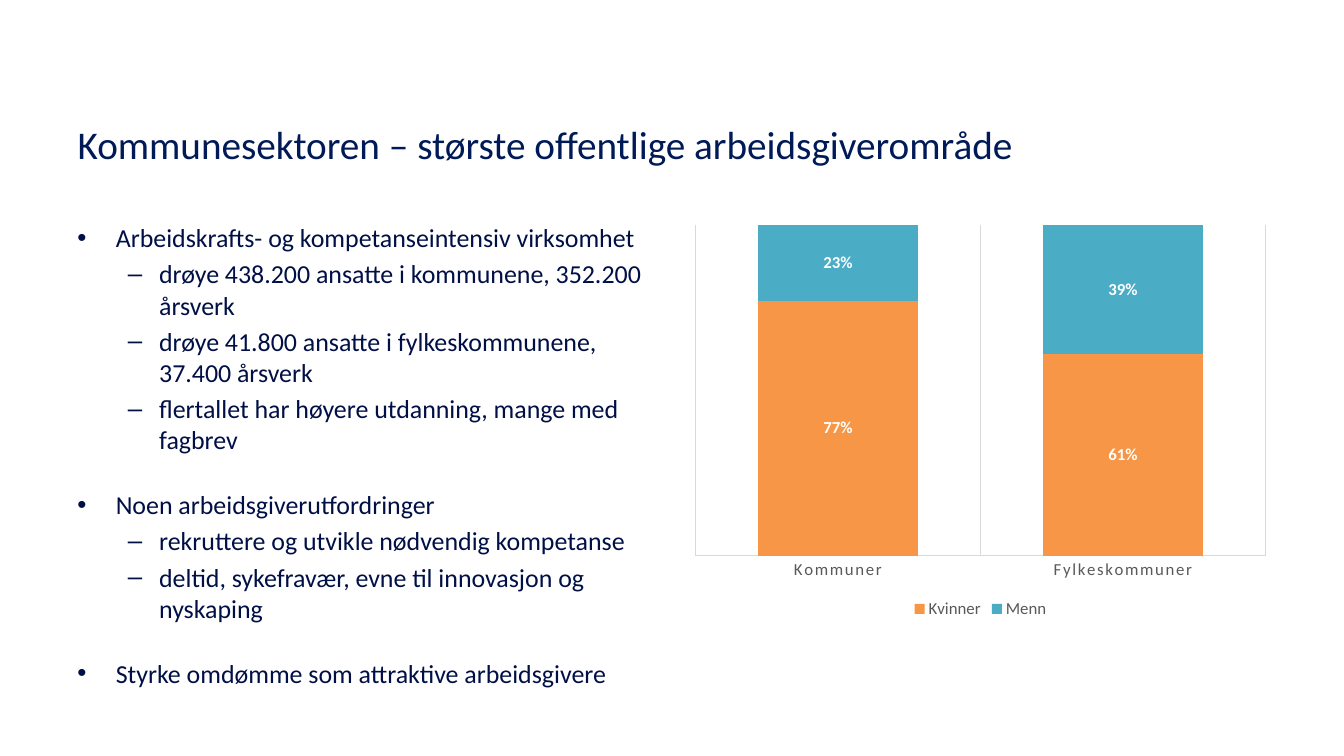
from dataclasses import dataclass

from lxml.etree import SubElement
from pptx import Presentation
from pptx.chart.data import CategoryChartData
from pptx.dml.color import RGBColor
from pptx.enum.chart import XL_CHART_TYPE, XL_LABEL_POSITION, XL_LEGEND_POSITION, XL_TICK_LABEL_POSITION, XL_TICK_MARK
from pptx.enum.text import MSO_ANCHOR, MSO_AUTO_SIZE, PP_ALIGN
from pptx.oxml.ns import qn
from pptx.util import Inches, Pt

TITLE = "Kommunesektoren – største offentlige arbeidsgiverområde"
SECTIONS = [
    ("Arbeidskrafts- og kompetanseintensiv virksomhet", [
        "drøye 438.200 ansatte i kommunene, 352.200 årsverk",
        "drøye 41.800 ansatte i fylkeskommunene, 37.400 årsverk",
        "flertallet har høyere utdanning, mange med fagbrev",
    ]),
    ("Noen arbeidsgiverutfordringer", [
        "rekruttere og utvikle nødvendig kompetanse",
        "deltid, sykefravær, evne til innovasjon og nyskaping",
    ]),
    ("Styrke omdømme som attraktive arbeidsgivere", []),
]
CATEGORIES = ["Kommuner", "Fylkeskommuner"]
SHARES = {"Kvinner": [0.77, 0.61], "Menn": [0.23, 0.39]}


@dataclass(frozen=True)
class Theme:
    font: str = "Calibri"
    title: RGBColor = RGBColor.from_string("001A58")
    body: RGBColor = RGBColor.from_string("001046")
    label: RGBColor = RGBColor.from_string("FFFFFF")
    axis: RGBColor = RGBColor.from_string("595959")
    grid: RGBColor = RGBColor.from_string("D9D9D9")
    series: tuple = (RGBColor.from_string("F79646"), RGBColor.from_string("4BACC6"))
    title_size: float = 28
    body_size: float = 18.5
    chart_size: float = 12
    section_gap: float = 24
    item_gap: float = 3.7


THEME = Theme()
LEFT, TOP, COLUMN, GUTTER = 0.67, 2.15, 5.89, 0.22


def set_font(font, size, color, bold=False):
    font.name = THEME.font
    font.size = Pt(size)
    font.color.rgb = color
    font.bold = bold


def set_line(line):
    line.color.rgb = THEME.grid
    line.width = Pt(0.75)


def add_title(page):
    title = page.shapes.title
    title.left, title.top = Inches(LEFT), Inches(0.8)
    title.width, title.height = Inches(12), Inches(1.25)
    title.text_frame.text = TITLE
    title.text_frame.vertical_anchor = MSO_ANCHOR.MIDDLE
    title.text_frame.auto_size = MSO_AUTO_SIZE.NONE
    para = title.text_frame.paragraphs[0]
    para.alignment = PP_ALIGN.LEFT
    set_font(para.font, THEME.title_size, THEME.title)


def add_bullet(frame, text, level, mark, indent, hanging, gap):
    para = frame.add_paragraph() if frame.text else frame.paragraphs[0]
    para.text = text
    para.level = level
    para.space_before = Pt(gap)
    properties = para._p.get_or_add_pPr()
    properties.set("marL", str(Inches(indent)))
    properties.set("indent", str(-Inches(hanging)))
    SubElement(properties, qn("a:buFont"), typeface="Arial")
    SubElement(properties, qn("a:buChar"), char=mark)
    set_font(para.font, THEME.body_size, THEME.body)


def add_body(page):
    box = page.shapes.add_textbox(Inches(LEFT), Inches(TOP), Inches(COLUMN), Inches(4.68))
    frame = box.text_frame
    frame.word_wrap = True
    for index, (heading, items) in enumerate(SECTIONS):
        add_bullet(frame, heading, 0, "•", 0.38, 0.38, THEME.section_gap if index else 0)
        for item in items:
            add_bullet(frame, item, 1, "–", 0.81, 0.31, THEME.item_gap)


def add_share_chart(page):
    data = CategoryChartData(number_format="0%")
    data.categories = CATEGORIES
    for name, values in SHARES.items():
        data.add_series(name, values)
    chart = page.shapes.add_chart(
        XL_CHART_TYPE.COLUMN_STACKED_100, Inches(LEFT + COLUMN + GUTTER), Inches(TOP),
        Inches(COLUMN), Inches(4.03), data).chart
    chart.has_title = False
    set_font(chart.font, THEME.chart_size, THEME.axis)

    plot = chart.plots[0]
    plot.gap_width, plot.overlap = 79, 100
    plot.vary_by_categories = False
    for series, color in zip(plot.series, THEME.series):
        series.format.fill.solid()
        series.format.fill.fore_color.rgb = color
        labels = series.data_labels
        labels.show_value = True
        labels.number_format, labels.number_format_is_linked = "0%", False
        labels.position = XL_LABEL_POSITION.CENTER
        set_font(labels.font, THEME.chart_size, THEME.label, bold=True)

    categories = chart.category_axis
    categories.has_major_gridlines = True
    categories.major_tick_mark = XL_TICK_MARK.NONE
    set_line(categories.major_gridlines.format.line)
    set_line(categories.format.line)
    set_font(categories.tick_labels.font, THEME.chart_size, THEME.axis)
    for properties in categories._element.iter(qn("a:defRPr")):
        properties.set("spc", "120")

    shares = chart.value_axis
    shares.minimum_scale, shares.maximum_scale = 0, 1
    shares.has_major_gridlines = False
    shares.tick_label_position = XL_TICK_LABEL_POSITION.NONE
    shares.visible = False

    chart.has_legend = True
    chart.legend.position = XL_LEGEND_POSITION.BOTTOM
    chart.legend.include_in_layout = False
    set_font(chart.legend.font, THEME.chart_size, THEME.axis)


def main():
    deck = Presentation()
    deck.slide_width, deck.slide_height = Inches(13.33), Inches(7.5)
    page = deck.slides.add_slide(deck.slide_layouts[5])
    add_title(page)
    add_body(page)
    add_share_chart(page)
    deck.save("out.pptx")


if __name__ == "__main__":
    main()
